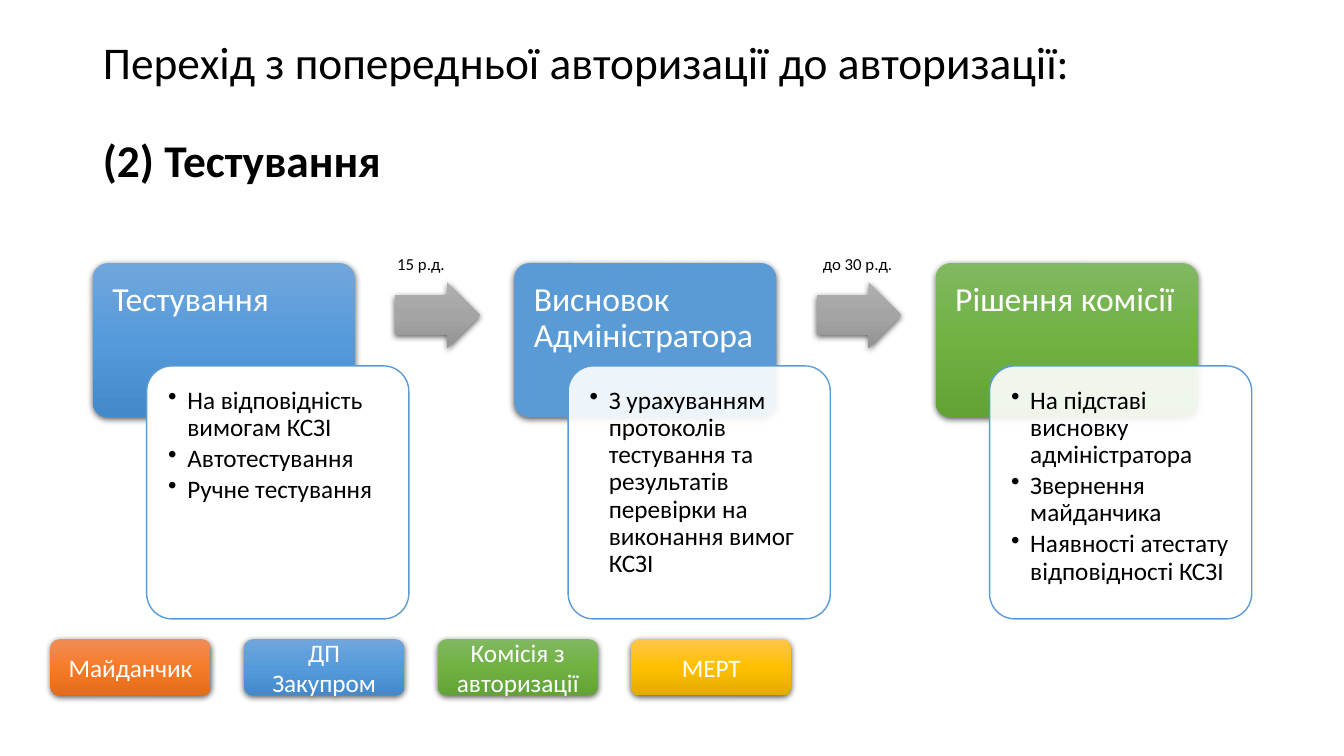
import copy
import lxml.etree
import pptx
import pptx.dml.color
import pptx.enum.shapes
import pptx.enum.text
import pptx.oxml.ns
import pptx.util

Inches = pptx.util.Inches
Pt = pptx.util.Pt
qn = pptx.oxml.ns.qn
SHAPE = pptx.enum.shapes.MSO_SHAPE
ALIGN = pptx.enum.text.PP_ALIGN
ANCHOR = pptx.enum.text.MSO_ANCHOR

ORANGE = ["F18C57", "F67B28", "E56C19"]
BLUE = ["71A6DB", "559BDB", "448ACA"]
GREEN = ["81B861", "6FB242", "62A336"]
YELLOW = ["FFC64B", "FFC000", "E3AB00"]
GRAY = ["AFAFAF", "A5A5A5", "939393"]

STEPS = [
    ("Тестування", BLUE, 100,
     ["На відповідність вимогам КСЗІ", "Автотестування", "Ручне тестування"]),
    ("Висновок Адміністратора", ["5B9BD5"], 90,
     ["З урахуванням протоколів тестування та результатів перевірки на виконання вимог КСЗІ"]),
    ("Рішення комісії", GREEN, 90,
     ["На підставі висновку адміністратора", "Звернення майданчика",
      "Наявності атестату відповідності КСЗІ"]),
]
TERMS = [("15 р.д.", 2.41), ("до 30 р.д.", 2.56)]
LEGEND = [("Майданчик", ORANGE), ("ДП Закупром", BLUE),
          ("Комісія з авторизації", GREEN), ("МЕРТ", YELLOW)]


def rgb(value):
    return pptx.dml.color.RGBColor.from_string(value)


def paint(s, colors):
    if len(colors) == 1:
        s.fill.solid()
        s.fill.fore_color.rgb = rgb(colors[0])
        return
    s.fill.gradient()
    s.fill.gradient_angle = 270
    stops = s._element.spPr.find(".//" + qn("a:gsLst"))
    stops.append(copy.deepcopy(stops[0]))
    for i, (stop, color) in enumerate(zip(s.fill.gradient_stops, colors)):
        stop.position = i / 2
        stop.color.rgb = rgb(color)


def add_shape(slide, kind, box, colors, adjustments=()):
    s = slide.shapes.add_shape(kind, *map(Inches, box))
    for i, value in enumerate(adjustments):
        s.adjustments[i] = value
    paint(s, colors)
    s.line.fill.background()
    s.shadow.inherit = False
    return s


def add_shadow(s):
    effects = s._element.spPr.find(qn("a:effectLst"))
    shadow = lxml.etree.SubElement(
        effects, qn("a:outerShdw"), blurRad=str(Pt(4.5)), dist=str(Pt(1.5)),
        dir="5400000", algn="ctr", rotWithShape="0")
    color = lxml.etree.SubElement(shadow, qn("a:srgbClr"), val="000000")
    lxml.etree.SubElement(color, qn("a:alpha"), val="63000")


def set_opacity(s, percent):
    color = s._element.spPr.find(qn("a:solidFill")).find(qn("a:srgbClr"))
    lxml.etree.SubElement(color, qn("a:alpha"), val=str(percent * 1000))


def set_text(s, lines, size, color, align=ALIGN.LEFT, anchor=ANCHOR.TOP,
             inset=None, spacing=1.0, after=0):
    tf = s.text_frame
    tf.word_wrap = True
    tf.vertical_anchor = anchor
    if inset is not None:
        tf.margin_left = tf.margin_top = tf.margin_right = tf.margin_bottom = Inches(inset)
    for i, line in enumerate(lines):
        p = tf.paragraphs[0] if i == 0 else tf.add_paragraph()
        p.text = line
        p.alignment = align
        p.line_spacing = spacing
        p.space_after = Pt(after)
        set_font(p, size, color)


def set_font(p, size, color):
    p.font.name = "Calibri"
    p.font.size = Pt(size)
    p.font.color.rgb = rgb(color)


def add_bullets(s):
    for p in s.text_frame.paragraphs:
        props = p._p.get_or_add_pPr()
        props.set("marL", str(Inches(0.19)))
        props.set("indent", str(Inches(-0.19)))
        bullet = lxml.etree.Element(qn("a:buChar"), char="•")
        props.find(qn("a:defRPr")).addprevious(bullet)


def place_title(slide, left, top, width, height):
    s = slide.shapes.title
    s.left, s.top, s.width, s.height = map(Inches, (left, top, width, height))
    tf = s.text_frame
    tf.word_wrap = True
    tf.auto_size = pptx.enum.text.MSO_AUTO_SIZE.NONE
    tf.vertical_anchor = ANCHOR.MIDDLE
    p = tf.paragraphs[0]
    p.alignment = ALIGN.LEFT
    p.line_spacing = 0.9
    set_font(p, 32.4, "000000")
    p.add_run().text = "Перехід з попередньої авторизації до авторизації:"
    p.add_line_break()
    p.add_line_break()
    r = p.add_run()
    r.text = "(2) Тестування"
    r.font.bold = True


def place_step(slide, left, top, heading, colors, opacity, bullets):
    card = add_shape(slide, SHAPE.ROUNDED_RECTANGLE, (left, top, 2.6, 1.53), colors, [0.1])
    add_shadow(card)
    set_text(card, [heading], 24, "FFFFFF", inset=0.15, spacing=0.9, after=8.4)
    body = add_shape(slide, SHAPE.ROUNDED_RECTANGLE,
                     (left + 0.535, top + 1.02, 2.6, 2.51), ["FFFFFF"], [0.1])
    set_opacity(body, opacity)
    body.line.color.rgb = rgb("5B9BD5")
    body.line.width = Pt(1)
    set_text(body, bullets, 18, "000000", inset=0.14, spacing=0.9, after=2.7)
    add_bullets(body)


def place_transition(slide, left, top, term, term_offset):
    arrow = add_shape(slide, SHAPE.RIGHT_ARROW, (left + 3, top + 0.19, 0.84, 0.65),
                      GRAY, [0.6, 0.5])
    add_shadow(arrow)
    label = slide.shapes.add_textbox(
        *map(Inches, (left + term_offset, top - 0.14, 1.69, 0.3)))
    set_text(label, [term], 12, "000000", align=ALIGN.CENTER)


def place_flow(slide, left, top, pitch):
    for i, step in enumerate(STEPS):
        place_step(slide, left + i * pitch, top, *step)
    for i, term in enumerate(TERMS):
        place_transition(slide, left + i * pitch, top, *term)


def place_legend(slide, left, top, pitch):
    for i, (name, colors) in enumerate(LEGEND):
        s = add_shape(slide, SHAPE.ROUNDED_RECTANGLE,
                      (left + i * pitch, top, 1.59, 0.56), colors)
        add_shadow(s)
        set_text(s, [name], 18, "FFFFFF", align=ALIGN.CENTER, anchor=ANCHOR.MIDDLE)


def main():
    prs = pptx.Presentation()
    prs.slide_width = Inches(13.33)
    prs.slide_height = Inches(7.5)
    slide = prs.slides.add_slide(prs.slide_layouts[5])
    place_title(slide, 0.92, 0.4, 11.5, 1.45)
    place_flow(slide, 0.92, 2.61, 4.18)
    place_legend(slide, 0.5, 6.34, 1.92)
    prs.save("out.pptx")


if __name__ == "__main__":
    main()
